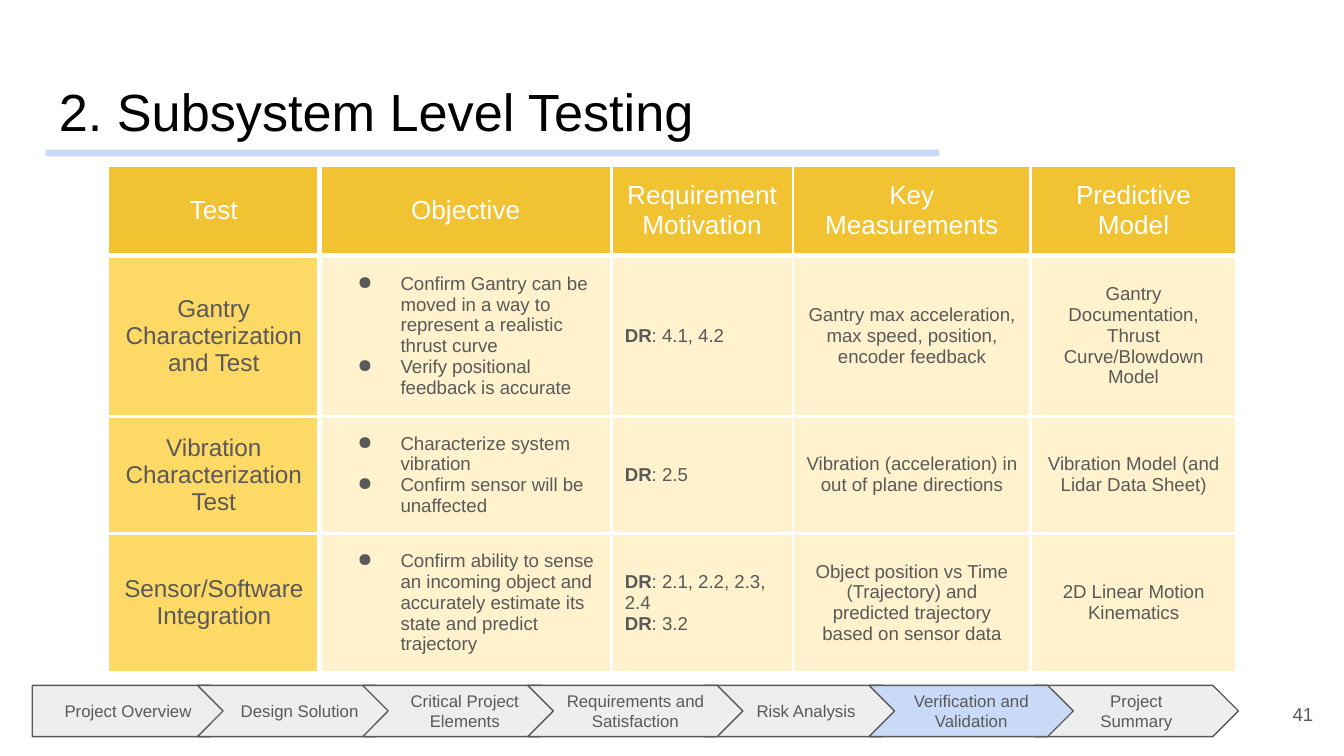
import pptx
import pptx.dml.color
import pptx.enum.shapes
import pptx.enum.text
import pptx.oxml
import pptx.oxml.ns
import pptx.util

Pt = pptx.util.Pt
ALIGN = pptx.enum.text.PP_ALIGN
MIDDLE = pptx.enum.text.MSO_ANCHOR.MIDDLE
SHAPE = pptx.enum.shapes.MSO_SHAPE

GREY, PALE, BLUE, WHITE = "595959", "EEEEEE", "C9DAF8", "FFFFFF"
GOLD, YELLOW, CREAM = "F1C232", "FFD966", "FFF2CC"

STAGES = [
    ("Project Overview", 109.4),
    ("Design Solution", 109.4),
    ("Critical Project Elements", 109.4),
    ("Requirements and Satisfaction", 115.2),
    ("Risk Analysis", 109.4),
    ("Verification and Validation", 109.4),
    ("Project Summary", 109.4),
]
STACKING = [0, 1, 2, 6, 4, 3, 5]
CURRENT_STAGE = 5
STAGE_OVERLAP = 20.9

COLUMN_WIDTHS = [113.8, 156.2, 97.2, 127.4, 110.2]
ROW_HEIGHTS = [45.4, 50.4, 50.4, 50.4]
TESTS = [
    [["Test"], ["Objective"], ["Requirement Motivation"],
     ["Key Measurements"], ["Predictive Model"]],
    [["Gantry Characterization and Test"],
     ["Confirm Gantry can be moved in a way to represent a realistic thrust curve",
      "Verify positional feedback is accurate"],
     ["DR: 4.1, 4.2"],
     ["Gantry max acceleration, max speed, position, encoder feedback"],
     ["Gantry Documentation, Thrust Curve/Blowdown Model"]],
    [["Vibration Characterization Test"],
     ["Characterize system vibration", "Confirm sensor will be unaffected"],
     ["DR: 2.5"],
     ["Vibration (acceleration) in out of plane directions"],
     ["Vibration Model (and Lidar Data Sheet)"]],
    [["Sensor/Software Integration"],
     ["Confirm ability to sense an incoming object and accurately estimate "
      "its state and predict trajectory"],
     ["DR: 2.1, 2.2, 2.3, 2.4", "DR: 3.2"],
     ["Object position vs Time (Trajectory) and predicted trajectory "
      "based on sensor data"],
     ["2D Linear Motion Kinematics"]],
]


def rgb(color):
    return pptx.dml.color.RGBColor.from_string(color)


def apply(target, values):
    for name, value in values.items():
        setattr(target, name, value)


def set_fill(target, color):
    target.fill.solid()
    target.fill.fore_color.rgb = rgb(color)


def set_margins(target):
    apply(target, {f"margin_{side}": Pt(7.2)
                   for side in ("left", "top", "right", "bottom")})


def add_run(paragraph, text, size, color, bold=False):
    run = paragraph.add_run()
    run.text = text
    apply(run.font, {"name": "Arial", "size": Pt(size), "bold": bold})
    run.font.color.rgb = rgb(color)


def write(frame, text, size, color, align, anchor=MIDDLE):
    set_margins(frame)
    apply(frame, {"word_wrap": True, "vertical_anchor": anchor})
    frame.paragraphs[0].alignment = align
    add_run(frame.paragraphs[0], text, size, color)


def add_label(slide, box, text, size, color, align, anchor=MIDDLE):
    label = slide.shapes.add_textbox(*map(Pt, box))
    write(label.text_frame, text, size, color, align, anchor)


def add_block(slide, kind, box, color):
    block = slide.shapes.add_shape(kind, *map(Pt, box))
    block.shadow.inherit = False
    set_fill(block, color)
    block.line.fill.background()
    return block


def add_progress(slide):
    lefts = [17.3]
    for _, width in STAGES[:-1]:
        lefts.append(lefts[-1] + width - STAGE_OVERLAP)
    for index in STACKING:
        name, width = STAGES[index]
        kind = SHAPE.CHEVRON if index else SHAPE.PENTAGON
        color = BLUE if index == CURRENT_STAGE else PALE
        stage = add_block(slide, kind, (lefts[index], 367.2, width, 27.4), color)
        set_fill(stage.line, GREY)
        stage.line.width = Pt(0.75)
        write(stage.text_frame, name, 9, GREY, ALIGN.CENTER)


def add_bullet(paragraph):
    properties = paragraph._p.get_or_add_pPr()
    properties.set("marL", str(Pt(36)))
    properties.set("indent", str(Pt(-23)))
    namespace = pptx.oxml.ns.nsdecls("a")
    for xml in (f'<a:buClr {namespace}><a:srgbClr val="{GREY}"/></a:buClr>',
                f'<a:buChar {namespace} char="●"/>'):
        properties.append(pptx.oxml.parse_xml(xml))


def set_borders(cell, row, column):
    widths = {
        "L": 3 if column == 1 else 1.5,
        "R": 3 if column == 0 else 1.5,
        "T": 3 if row == 1 else 1.5,
        "B": 3 if row == 0 else 1.5,
    }
    properties = cell._tc.get_or_add_tcPr()
    for side, width in widths.items():
        properties.append(pptx.oxml.parse_xml(
            f'<a:ln{side} {pptx.oxml.ns.nsdecls("a")} w="{Pt(width)}">'
            f'<a:solidFill><a:srgbClr val="{WHITE}"/></a:solidFill></a:ln{side}>'))


def cell_style(row, column):
    if row == 0:
        return GOLD, 14, WHITE
    if column == 0:
        return YELLOW, 13, GREY
    return CREAM, 10, GREY


def fill_cell(cell, lines, row, column):
    background, size, color = cell_style(row, column)
    set_borders(cell, row, column)
    set_fill(cell, background)
    set_margins(cell)
    cell.vertical_anchor = MIDDLE
    frame = cell.text_frame
    for index, line in enumerate(lines):
        paragraph = frame.add_paragraph() if index else frame.paragraphs[0]
        left_aligned = row > 0 and column in (1, 2)
        paragraph.alignment = ALIGN.LEFT if left_aligned else ALIGN.CENTER
        if row and column == 1:
            add_bullet(paragraph)
        if row and column == 2:
            add_run(paragraph, "DR", size, color, bold=True)
            line = line.removeprefix("DR")
        add_run(paragraph, line, size, color)


def add_tests(slide):
    table = slide.shapes.add_table(
        len(ROW_HEIGHTS), len(COLUMN_WIDTHS), Pt(57.6), Pt(88.6),
        Pt(sum(COLUMN_WIDTHS)), Pt(sum(ROW_HEIGHTS))).table
    apply(table, {"first_row": False, "horz_banding": False})
    for column, width in zip(table.columns, COLUMN_WIDTHS):
        column.width = Pt(width)
    for row, height in zip(table.rows, ROW_HEIGHTS):
        row.height = Pt(height)
    for row, test in enumerate(TESTS):
        for column, lines in enumerate(test):
            fill_cell(table.cell(row, column), lines, row, column)


def main():
    deck = pptx.Presentation()
    apply(deck, {"slide_width": Pt(720), "slide_height": Pt(405)})
    slide = deck.slides.add_slide(deck.slide_layouts[6])
    add_progress(slide)
    add_block(slide, SHAPE.RECTANGLE, (24.5, 80.2, 478.8, 3.6), BLUE)
    add_label(slide, (24.5, 35.3, 671, 45.4), "2. Subsystem Level Testing",
              28, "000000", ALIGN.LEFT, pptx.enum.text.MSO_ANCHOR.TOP)
    add_label(slide, (667.4, 367.2, 43.2, 31), "41", 10, GREY, ALIGN.RIGHT)
    add_tests(slide)
    deck.save("out.pptx")


if __name__ == "__main__":
    main()
